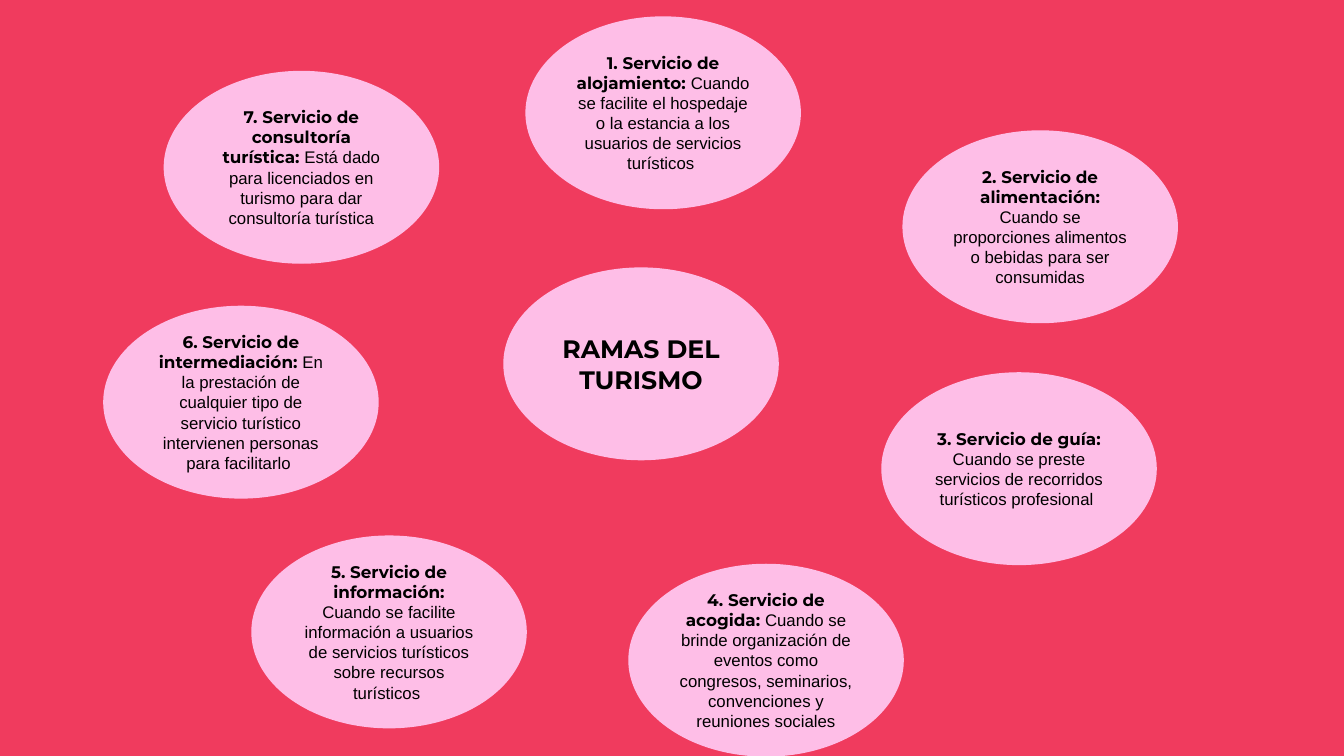
"""Builds a slide that shows the seven branches of tourism around a central title."""
from pptx import Presentation
from pptx.dml.color import RGBColor
from pptx.enum.shapes import MSO_SHAPE
from pptx.enum.text import MSO_ANCHOR, PP_ALIGN
from pptx.util import Pt

BACKGROUND = "F03B5E"
PINK = "FEBEE7"
BLACK = "000000"
OVAL_WIDTH, OVAL_HEIGHT = 195.8, 136.8

BRANCHES = [
    (375.8, 12.2, "Servicio de alojamiento",
     "Cuando se facilite el hospedaje o la estancia a los usuarios de servicios turísticos "),
    (645.1, 93.6, "Servicio de alimentación",
     "Cuando se proporciones alimentos o bebidas para ser consumidas"),
    (630, 266.4, "Servicio de guía",
     "Cuando se preste servicios de recorridos turísticos profesional "),
    (449.3, 403.2, "Servicio de acogida",
     "Cuando se brinde organización de eventos como congresos, seminarios, "
     "convenciones y reuniones sociales"),
    (180, 383, "Servicio de información",
     "Cuando se facilite información a usuarios de servicios turísticos "
     "sobre recursos turísticos "),
    (74.2, 218.9, "Servicio de intermediación",
     "En la prestación de cualquier tipo de servicio turístico "
     "intervienen personas para facilitarlo "),
    (117.4, 51.1, "Servicio de consultoría turística",
     "Está dado para licenciados en turismo para dar consultoría turística"),
]


def color(value):
    """Return the colour for a hex string."""
    return RGBColor.from_string(value)


def add_span(para, text, size=12, font="Arial", bold=False):
    """Append formatted text to a paragraph."""
    span = para.add_run()
    span.text = text
    span.font.size = Pt(size)
    span.font.name = font
    span.font.bold = bold
    span.font.color.rgb = color(BLACK)


def add_oval(page, left, top):
    """Draw a pink oval and return its centred paragraph."""
    oval = page.shapes.add_shape(
        MSO_SHAPE.OVAL, Pt(left), Pt(top), Pt(OVAL_WIDTH), Pt(OVAL_HEIGHT))
    oval.shadow.inherit = False
    oval.fill.solid()
    oval.fill.fore_color.rgb = color(PINK)
    oval.line.color.rgb = color(PINK)
    oval.line.width = Pt(1)
    oval.text_frame.word_wrap = True
    oval.text_frame.vertical_anchor = MSO_ANCHOR.MIDDLE
    para = oval.text_frame.paragraphs[0]
    para.alignment = PP_ALIGN.CENTER
    return para


def main():
    """Build and save the slide."""
    deck = Presentation()
    deck.slide_width, deck.slide_height = Pt(960), Pt(540)
    page = deck.slides.add_slide(deck.slide_layouts.get_by_name("Blank"))
    page.background.fill.solid()
    page.background.fill.fore_color.rgb = color(BACKGROUND)

    center = add_oval(page, 360, 191.5)
    add_span(center, "RAMAS DEL TURISMO", size=18, font="Montserrat", bold=True)
    for number, (left, top, name, description) in enumerate(BRANCHES, start=1):
        para = add_oval(page, left, top)
        add_span(para, f"{number}. {name}: ", font="Montserrat", bold=True)
        add_span(para, description)

    deck.save("out.pptx")


if __name__ == "__main__":
    main()
